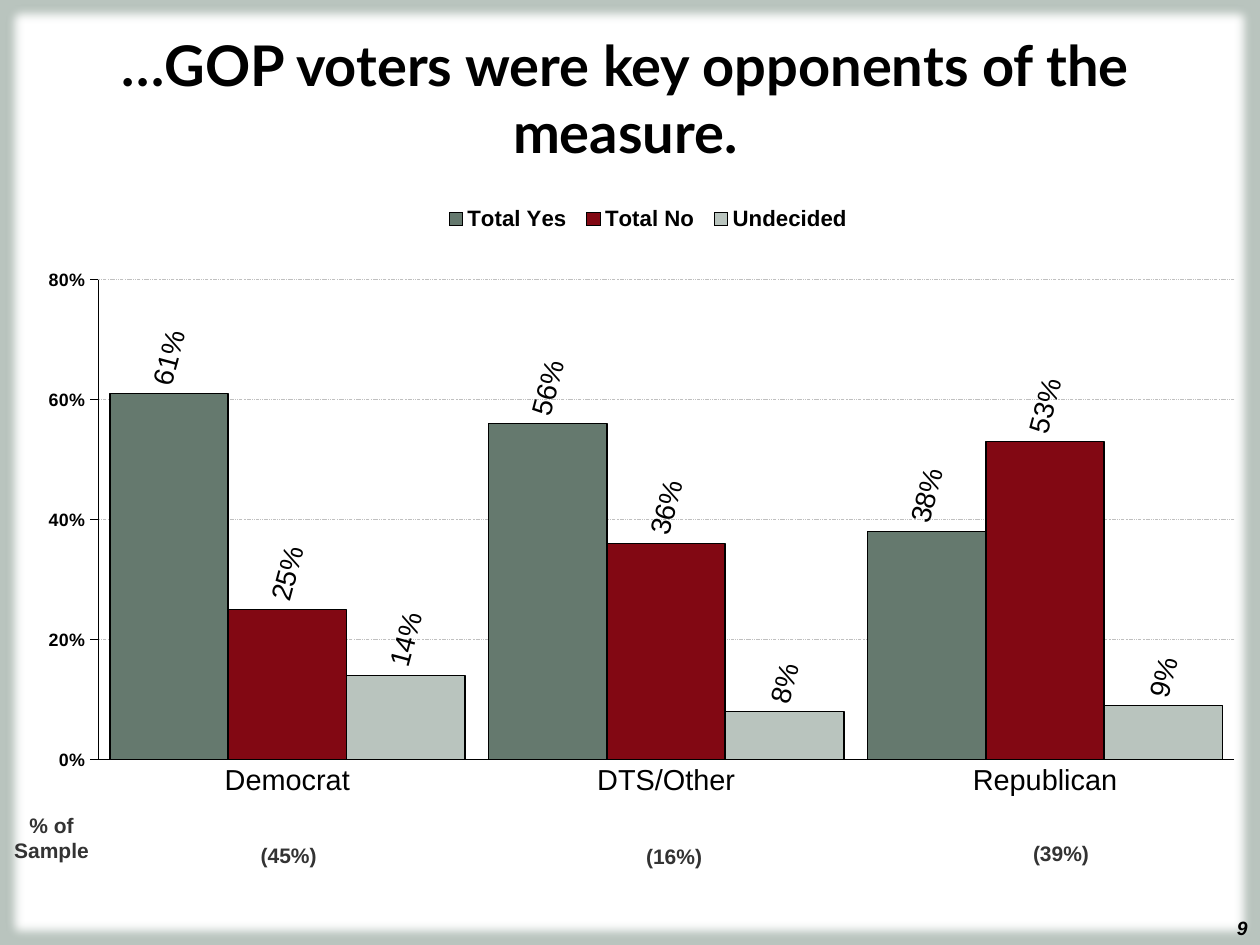
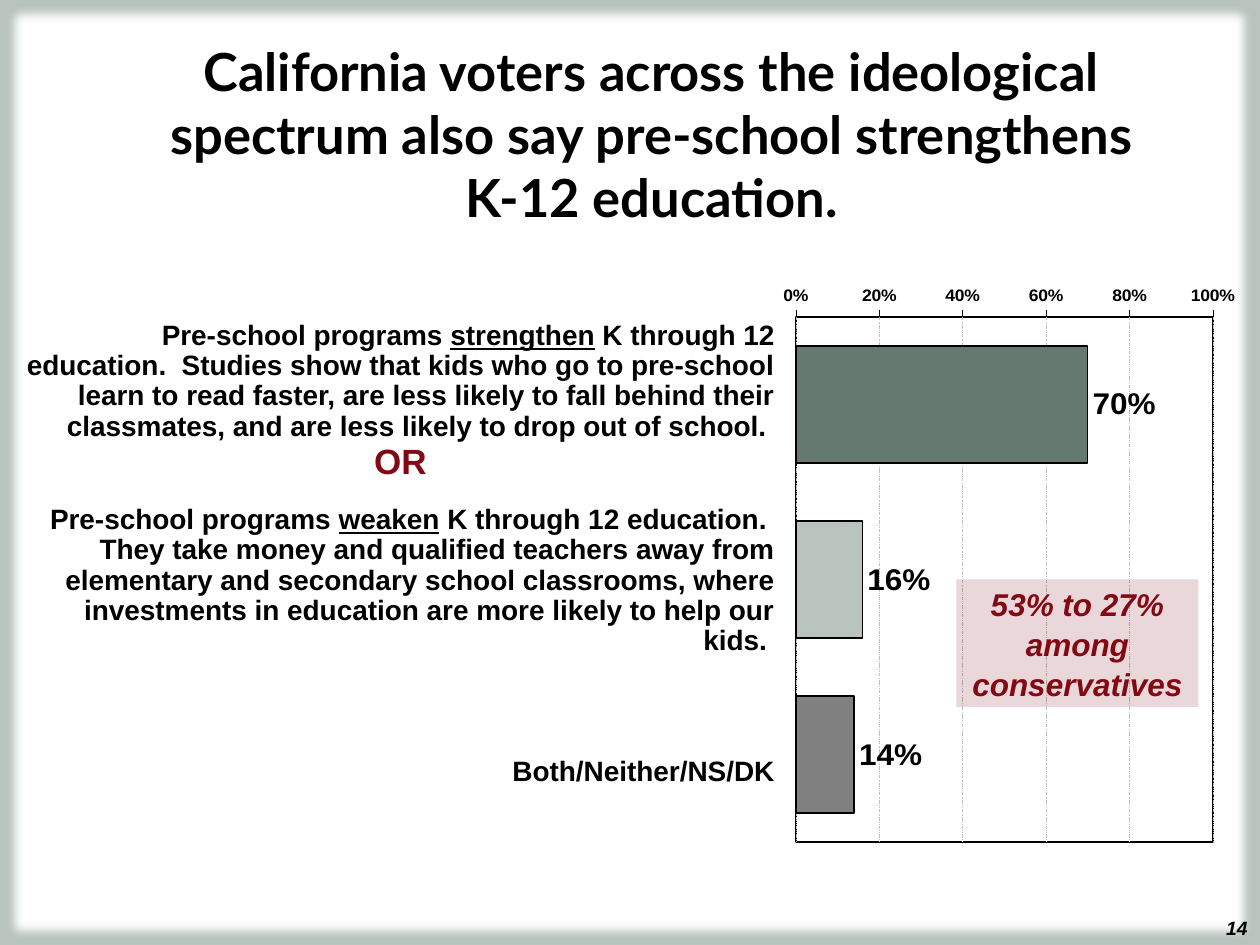
from lxml.etree import SubElement
from pptx import Presentation
from pptx.chart.data import CategoryChartData
from pptx.dml.color import RGBColor
from pptx.enum.chart import (XL_AXIS_CROSSES, XL_CHART_TYPE, XL_LABEL_POSITION,
                             XL_LEGEND_POSITION, XL_TICK_LABEL_POSITION, XL_TICK_MARK)
from pptx.enum.dml import MSO_LINE
from pptx.enum.shapes import MSO_SHAPE
from pptx.enum.text import MSO_ANCHOR, PP_ALIGN
from pptx.oxml import parse_xml
from pptx.oxml.ns import nsdecls, qn
from pptx.util import Cm, Pt

BLACK = RGBColor(0x00, 0x00, 0x00)
WHITE = RGBColor(0xFF, 0xFF, 0xFF)
CHARCOAL = RGBColor(0x33, 0x33, 0x33)
GRAY = RGBColor(0x80, 0x80, 0x80)
SILVER = RGBColor(0xC0, 0xC0, 0xC0)
DARK_GREEN = RGBColor(0x4C, 0x5B, 0x53)
GREEN = RGBColor(0x65, 0x79, 0x6E)
PALE_GREEN = RGBColor(0xB9, 0xC4, 0xBE)
RED = RGBColor(0x82, 0x08, 0x13)
TITLE_FONT = "Lato"
BODY_FONT = "Arial"
NO_TABLE_STYLE = "{2D5ABB26-0587-4C30-8999-92F81FD0307C}"


def write_text(shape, text, size, color=BLACK, name=BODY_FONT,
               align=PP_ALIGN.CENTER, italic=False, anchor=MSO_ANCHOR.TOP):
    frame = shape.text_frame
    frame.word_wrap = True
    frame.vertical_anchor = anchor
    paragraph = frame.paragraphs[0]
    paragraph.text = text
    paragraph.alignment = align
    font = paragraph.font
    font.name, font.size, font.color.rgb = name, Pt(size), color
    font.bold, font.italic = True, italic
    return paragraph


def set_layout(element, index, values, inner=False):
    for old_layout in element.findall(qn("c:layout")):
        element.remove(old_layout)
    layout = parse_xml(f"<c:layout {nsdecls('c')}><c:manualLayout/></c:layout>")
    settings = [("layoutTarget", "inner")] if inner else []
    settings += [("xMode", "edge"), ("yMode", "edge")]
    settings += zip("xywh", values)
    for tag, value in settings:
        SubElement(layout[0], qn(f"c:{tag}")).set("val", str(value))
    element.insert(index, layout)


presentation = Presentation()
presentation.slide_width = Cm(25.4)
presentation.slide_height = Cm(19.05)
background = presentation.slide_master.background.fill
background.solid()
background.fore_color.rgb = PALE_GREEN

slides = []
for page_number in ("9", "14"):
    slide = presentation.slides.add_slide(presentation.slide_layouts[6])
    panel = slide.shapes.add_shape(MSO_SHAPE.RECTANGLE, Cm(0.1), Cm(0.08), Cm(25.2), Cm(18.92))
    panel.shadow.inherit = False
    panel.fill.solid()
    panel.fill.fore_color.rgb = WHITE
    panel.line.color.rgb = DARK_GREEN
    panel.line.width = Pt(1.5)
    effects = panel._element.spPr.find(qn("a:effectLst"))
    SubElement(effects, qn("a:softEdge")).set("rad", "63500")
    number_box = slide.shapes.add_textbox(Cm(22.17), Cm(18.34), Cm(3.23), Cm(0.71))
    write_text(number_box, page_number, 11, align=PP_ALIGN.RIGHT, italic=True)
    slides.append(slide)
party_slide, ideology_slide = slides

party_data = CategoryChartData(number_format="0%")
party_data.categories = ["Democrat", "DTS/Other", "Republican"]
party_data.add_series("Total Yes", (0.61, 0.56, 0.38))
party_data.add_series("Total No", (0.25, 0.36, 0.53))
party_data.add_series("Undecided", (0.14, 0.08, 0.09))
party_chart = party_slide.shapes.add_chart(
    XL_CHART_TYPE.COLUMN_CLUSTERED, Cm(0.51), Cm(3.96), Cm(24.38), Cm(12.9), party_data).chart

ideology_data = CategoryChartData(number_format="0%")
ideology_data.categories = ["1", "2", "3"]
ideology_data.add_series("Series 1", (0.7, 0.16, 0.14))
ideology_chart = ideology_slide.shapes.add_chart(
    XL_CHART_TYPE.BAR_CLUSTERED, Cm(15.24), Cm(5.77), Cm(10.01), Cm(12.01), ideology_data).chart

for chart, gap, maximum, axis_size, label_size, label_bold, plot_layout in (
        (party_chart, 20, 0.8, 10.2, 16, False, (0.06, 0.13, 0.94, 0.75)),
        (ideology_chart, 50, 1, 10, 18, True, (0.08, 0, 0.84, 0.93))):
    chart.has_title = False
    chart.has_legend = False
    chart.font.name = BODY_FONT
    chart.font.bold = True
    chart.font.color.rgb = BLACK
    set_layout(chart._chartSpace.chart.plotArea, 0, plot_layout, inner=True)

    plot = chart.plots[0]
    plot.gap_width = gap
    plot.overlap = 0
    plot.vary_by_categories = False
    for series, color in zip(plot.series, (GREEN, RED, PALE_GREEN)):
        series.format.fill.solid()
        series.format.fill.fore_color.rgb = color
        series.format.line.color.rgb = BLACK
        series.format.line.width = Pt(1)
        labels = series.data_labels
        labels.show_value = True
        labels.position = XL_LABEL_POSITION.OUTSIDE_END
        labels.number_format = "0%"
        labels.number_format_is_linked = False
        labels.font.name = BODY_FONT
        labels.font.size = Pt(label_size)
        labels.font.bold = label_bold
        labels.font.color.rgb = BLACK

    axis = chart.value_axis
    axis.minimum_scale = 0
    axis.maximum_scale = maximum
    axis.major_unit = 0.2
    axis.major_tick_mark = XL_TICK_MARK.OUTSIDE
    axis.tick_labels.number_format = "0%"
    axis.tick_labels.number_format_is_linked = False
    axis.tick_labels.font.size = Pt(axis_size)
    axis.tick_labels.font.bold = True
    axis.format.line.color.rgb = BLACK
    axis.format.line.width = Pt(0.25)
    gridline = axis.major_gridlines.format.line
    gridline.color.rgb = SILVER
    gridline.width = Pt(0.25)
    gridline.dash_style = MSO_LINE.DASH_DOT_DOT

party_chart.font.size = Pt(18.5)
party_axis = party_chart.category_axis
party_axis.major_tick_mark = XL_TICK_MARK.NONE
party_axis.tick_labels.font.size = Pt(16.5)
party_axis.tick_labels.font.bold = False
party_axis.format.line.color.rgb = BLACK
party_axis.format.line.width = Pt(0.25)
for series in party_chart.plots[0].series:
    label_text = series.data_labels._element.find(qn("c:txPr"))
    label_text.find(qn("a:bodyPr")).set("rot", "-4500000")
party_chart.has_legend = True
legend = party_chart.legend
legend.position = XL_LEGEND_POSITION.TOP
legend.include_in_layout = False
legend.font.size = Pt(12.7)
legend.font.bold = True
set_layout(legend._element, 1, (0.34, 0.01, 0.35, 0.05))

ideology_chart.font.size = Pt(5.2)
ideology_axis = ideology_chart.category_axis
ideology_axis.reverse_order = True
ideology_axis.crosses = XL_AXIS_CROSSES.MAXIMUM
ideology_axis.tick_label_position = XL_TICK_LABEL_POSITION.NONE
ideology_axis.visible = False
for index, color in ((1, PALE_GREEN), (2, GRAY)):
    bar = ideology_chart.plots[0].series[0].points[index].format
    bar.fill.solid()
    bar.fill.fore_color.rgb = color
    bar.line.color.rgb = BLACK
    bar.line.width = Pt(1)
ideology_chart._chartSpace.chart.plotArea.append(parse_xml(
    f'<c:spPr {nsdecls("c", "a")}><a:noFill/><a:ln w="12700"><a:solidFill>'
    f'<a:srgbClr val="{BLACK}"/></a:solidFill></a:ln></c:spPr>'))

for slide, title, size, left, top, width, height in (
        (party_slide, "…GOP voters were key opponents of the measure.",
         32, 0.94, 0.38, 23.34, 3.18),
        (ideology_slide, "California voters across the ideological spectrum also say "
         "pre-school strengthens K-12 education.", 30, 2.95, 0.64, 20.37, 4.11)):
    title_box = slide.shapes.add_textbox(Cm(left), Cm(top), Cm(width), Cm(height))
    write_text(title_box, title, size, name=TITLE_FONT, anchor=MSO_ANCHOR.MIDDLE)

for text, left, top, height in (
        ("% of Sample", 0, 16.26, 1.27),
        ("(45%)", 4.78, 16.87, 0.76),
        ("(16%)", 12.55, 16.89, 0.76),
        ("(39%)", 20.35, 16.81, 0.76)):
    sample_box = party_slide.shapes.add_textbox(Cm(left), Cm(top), Cm(2.08), Cm(height))
    write_text(sample_box, text, 12, CHARCOAL)

statements = (
    (2.97, ("Pre-school programs ", "strengthen",
            " K through 12 education.  Studies show that kids who go to pre-school learn to "
            "read faster, are less likely to fall behind their classmates, and are less "
            "likely to drop out of school. ")),
    (4.32, ("Pre-school programs ", "weaken",
            " K through 12 education.  They take money and qualified teachers away from "
            "elementary and secondary school classrooms, where investments in education "
            "are more likely to help our kids. ")),
    (2.64, ("Both/Neither/NS/DK",)),
)
table = ideology_slide.shapes.add_table(
    len(statements), 1, Cm(0.1), Cm(6.07), Cm(15.77), Cm(9.93)).table
table.first_row = False
table.horz_banding = False
table._tbl.tblPr.find(qn("a:tableStyleId")).text = NO_TABLE_STYLE
for row_index, (height, parts) in enumerate(statements):
    table.rows[row_index].height = Cm(height)
    cell = table.cell(row_index, 0)
    cell.fill.background()
    cell.vertical_anchor = MSO_ANCHOR.BOTTOM
    paragraph = cell.text_frame.paragraphs[0]
    paragraph.alignment = PP_ALIGN.RIGHT
    paragraph.line_spacing = 0.97
    for part_index, part in enumerate(parts):
        run = paragraph.add_run()
        run.text = part
        if part_index == 1:
            run.font.underline = True
    font = paragraph.font
    font.name, font.size, font.bold, font.color.rgb = BODY_FONT, Pt(16), True, BLACK

or_box = ideology_slide.shapes.add_textbox(Cm(7.01), Cm(8.74), Cm(2.13), Cm(1.09))
write_text(or_box, "OR", 20, RED)

callout = ideology_slide.shapes.add_shape(
    MSO_SHAPE.RECTANGLE, Cm(19.28), Cm(11.68), Cm(4.88), Cm(2.57))
callout.shadow.inherit = False
callout.fill.solid()
callout.fill.fore_color.rgb = RED
fill_color = callout._element.spPr.find(qn("a:solidFill")).find(qn("a:srgbClr"))
SubElement(fill_color, qn("a:alpha")).set("val", "16000")
callout.line.fill.background()
callout_text = write_text(callout, "53% to 27% among conservatives", 18, RED,
                          italic=True, anchor=MSO_ANCHOR.MIDDLE)
callout_text.line_spacing = 1.05

presentation.save("out.pptx")
